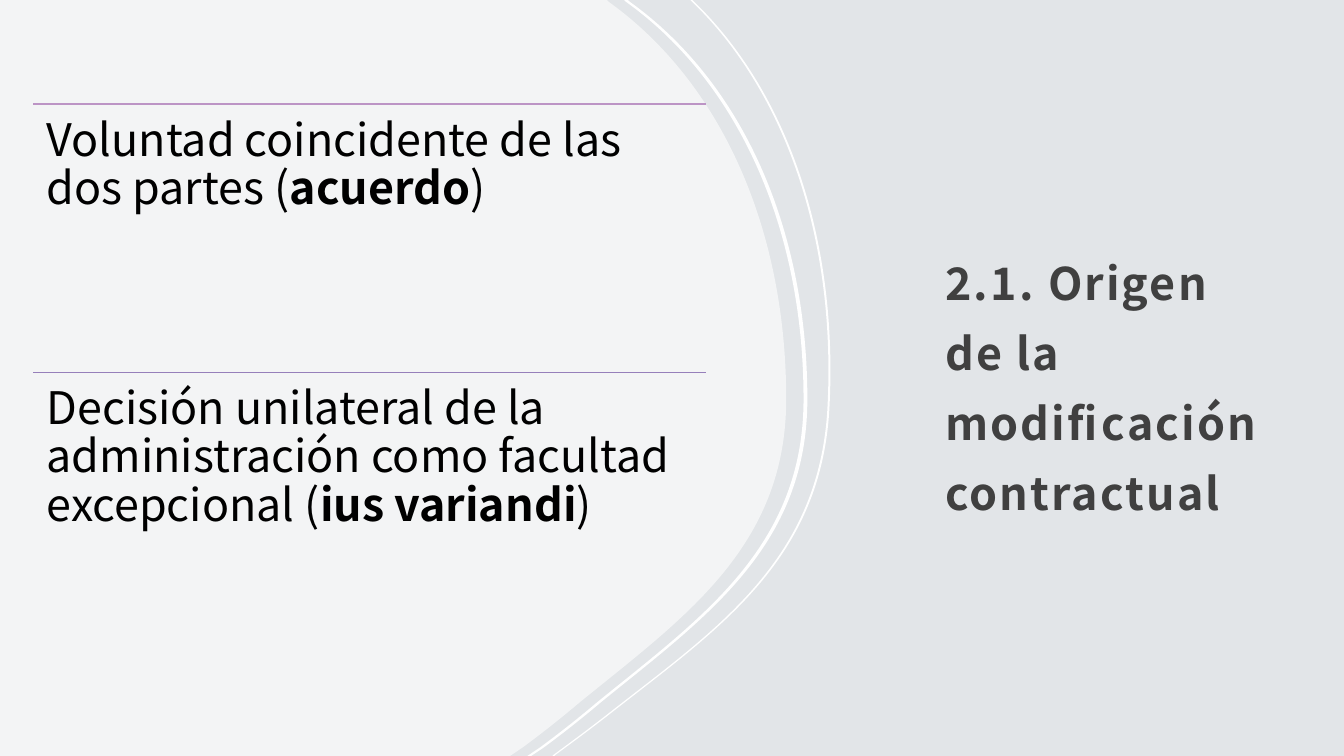
from lxml.etree import SubElement
from pptx import Presentation
from pptx.dml.color import RGBColor
from pptx.enum.shapes import MSO_CONNECTOR
from pptx.enum.text import MSO_ANCHOR, MSO_AUTO_SIZE, PP_ALIGN
from pptx.oxml.ns import qn
from pptx.util import Pt

FONT = "Noto Sans CJK JP"
WIDTH, HEIGHT = 960, 540

# Each edge runs from top to bottom: a line, three Bezier curves, a line
PANEL_EDGE = [(433.4, 0), (434.9, 1.4),
              (516.2, 59.8), (561.6, 164.9), (561.6, 285.1),
              (561.6, 391), (488.2, 441.4), (414, 501.8),
              (400.3, 513.4), (386.6, 524.2), (373, 534.2),
              (364.3, 540)]
THIN_EDGE = [(494.6, 0), (496.8, 2.2),
             (563.8, 67.7), (598.3, 172.8), (592.6, 289.4),
             (587.5, 399.6), (514.1, 448.6), (437.8, 508.3),
             (424.1, 519.1), (410.4, 529.2), (396.7, 539.3),
             (396, 540)]

ORIGINS = [
    ("BC94C5", [("Voluntad coincidente de las dos partes (", False),
                ("acuerdo", True), (")", False)]),
    ("967FBA", [("Decisión unilateral de la administración como facultad "
                 "excepcional (", False),
                ("ius variandi", True), (")", False)]),
]


def rgb(color):
    return RGBColor.from_string(color)


def shifted(edge, dx):
    return [(x + dx, y) for x, y in edge]


def bend_edges(sp, edge_starts):
    """Turn the nine inner segments of each edge into three Bezier curves."""
    outline = next(sp._element.iter(qn("a:path")))
    segments = list(outline)
    for start in edge_starts:
        for i in range(start + 2, start + 11, 3):
            curve = outline.makeelement(qn("a:cubicBezTo"))
            segments[i].addprevious(curve)
            for segment in segments[i:i + 3]:
                curve.append(segment[0])
                outline.remove(segment)


def add_outline(s, points, edge_starts, alpha=100):
    """Add a closed white outline; alpha is its opacity in percent."""
    start, *rest = [(Pt(x), Pt(y)) for x, y in points]
    builder = s.shapes.build_freeform(*start)
    builder.add_line_segments(rest, close=True)
    sp = builder.convert_to_shape()
    bend_edges(sp, edge_starts)
    sp.shadow.inherit = False
    sp.fill.solid()
    sp.fill.fore_color.rgb = rgb("FFFFFF")
    sp.line.fill.background()
    if alpha < 100:
        color = sp._element.spPr.find(qn("a:solidFill"))[0]
        SubElement(color, qn("a:alpha"), val=str(alpha * 1000))


def add_band(s, edge, inner, outer):
    """Add a ribbon between two shifted positions of an edge."""
    points = shifted(edge, outer) + shifted(edge, inner)[::-1]
    add_outline(s, points, [0, len(edge)])


def add_backdrop(s):
    s.background.fill.solid()
    s.background.fill.fore_color.rgb = rgb("E2E5E8")
    add_outline(s, [(0, 0)] + PANEL_EDGE + [(0, HEIGHT)], [1], alpha=60)
    add_band(s, THIN_EDGE, -1.44, 0)
    add_band(s, PANEL_EDGE, 12.4, 15.1)


def format_frame(tf, inset, anchor):
    tf.word_wrap = True
    tf.auto_size = MSO_AUTO_SIZE.NONE
    tf.vertical_anchor = anchor
    tf.margin_left = tf.margin_right = Pt(inset)
    tf.margin_top = tf.margin_bottom = Pt(inset)


def add_run(p, text, color, bold):
    r = p.add_run()
    r.text = text
    r.font.name = FONT
    r.font.size = Pt(32)
    r.font.bold = bold
    r.font.color.rgb = rgb(color)
    return r


def add_title(s, left, top, width, height):
    title = s.shapes.title
    title.left, title.top = Pt(left), Pt(top)
    title.width, title.height = Pt(width), Pt(height)
    format_frame(title.text_frame, 8.6, MSO_ANCHOR.MIDDLE)
    title.text_frame.margin_bottom = Pt(7.2)
    p = title.text_frame.paragraphs[0]
    p.alignment = PP_ALIGN.LEFT
    p.line_spacing = 1.3
    r = add_run(p, "2.1. Origen de la modificación contractual", "404040", True)
    r.font._element.set("spc", "150")


def add_origin(s, left, top, width, height, color, runs):
    """Add one statement under a coloured rule."""
    rule = s.shapes.add_connector(MSO_CONNECTOR.STRAIGHT, Pt(left), Pt(top),
                                  Pt(left + width), Pt(top))
    rule.line.color.rgb = rgb(color)
    rule.line.width = Pt(1)
    SubElement(rule._element.spPr, qn("a:effectLst"))
    box = s.shapes.add_textbox(Pt(left), Pt(top), Pt(width), Pt(height))
    format_frame(box.text_frame, 9.6, MSO_ANCHOR.TOP)
    p = box.text_frame.paragraphs[0]
    p.line_spacing = 0.9
    for text, bold in runs:
        add_run(p, text, "000000", bold)


def add_origins(s, left, top, width, height):
    row = height / len(ORIGINS)
    for i, (color, runs) in enumerate(ORIGINS):
        add_origin(s, left, top + i * row, width, row, color, runs)


def main():
    prs = Presentation()
    prs.slide_width, prs.slide_height = Pt(WIDTH), Pt(HEIGHT)
    s = prs.slides.add_slide(prs.slide_layouts[5])
    add_title(s, 666.7, 103.9, 252.7, 332.6)
    add_backdrop(s)
    add_origins(s, 23.7, 74.4, 480.6, 383)
    prs.save("out.pptx")


if __name__ == "__main__":
    main()
